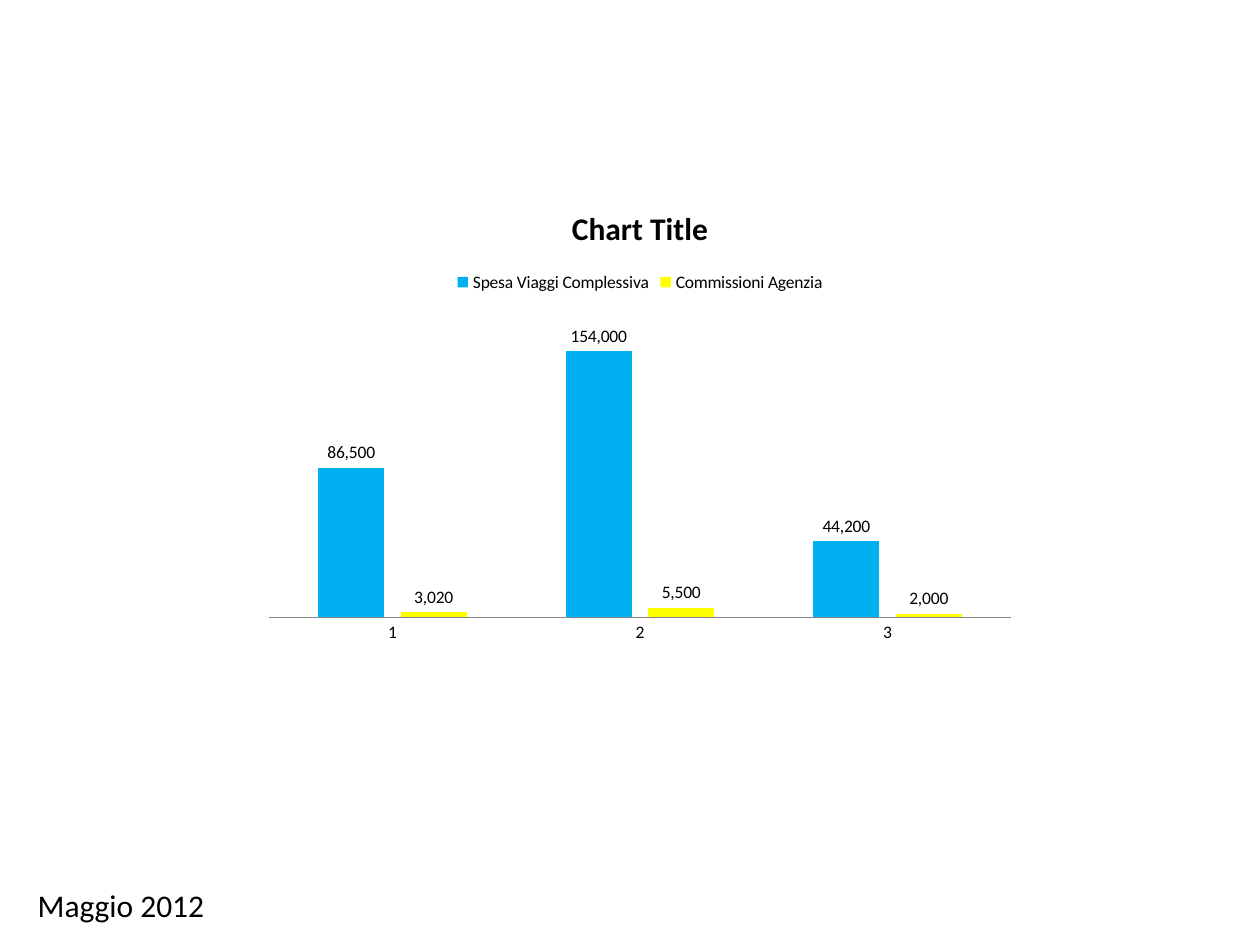
"""Build a slide with a clustered column chart of travel spend and agency fees."""
import pptx
import pptx.chart.data
import pptx.dml.color
import pptx.enum.chart
import pptx.enum.text
import pptx.util

Pt = pptx.util.Pt
FONT = "Calibri"
COLORS = {"text": "000000", "axis": "868686", "spend": "00B0F0", "fees": "FFFF00"}
NUMBER_FORMAT = "#,##0"


def rgb(name):
    return pptx.dml.color.RGBColor.from_string(COLORS[name])


def style_font(font, size, bold=False):
    font.name = FONT
    font.size = Pt(size)
    font.bold = bold
    font.color.rgb = rgb("text")


deck = pptx.Presentation()
deck.slide_width, deck.slide_height = Pt(720), Pt(540)
page = deck.slides.add_slide(deck.slide_layouts[6])

box = page.shapes.add_textbox(Pt(14.4), Pt(502.5), Pt(181.5), Pt(29))
box.text_frame.word_wrap = True
box.text_frame.auto_size = pptx.enum.text.MSO_AUTO_SIZE.SHAPE_TO_FIT_TEXT
span = box.text_frame.paragraphs[0].add_run()
span.text = "Maggio 2012"
style_font(span.font, 18)

data = pptx.chart.data.CategoryChartData(number_format=NUMBER_FORMAT)
data.categories = ["1", "2", "3"]
data.add_series("Spesa Viaggi Complessiva", [86500, 154000, 44200])
data.add_series("Commissioni Agenzia", [3020, 5500, 2000])
chart = page.shapes.add_chart(
    pptx.enum.chart.XL_CHART_TYPE.COLUMN_CLUSTERED,
    Pt(144.7), Pt(105.8), Pt(442), Pt(266.4), data,
).chart
style_font(chart.font, 10)

chart.has_title = True
span = chart.chart_title.text_frame.paragraphs[0].add_run()
span.text = "Chart Title"
style_font(span.font, 18, bold=True)
chart.chart_title.include_in_layout = False

chart.has_legend = True
chart.legend.position = pptx.enum.chart.XL_LEGEND_POSITION.TOP
chart.legend.include_in_layout = False

chart.category_axis.major_tick_mark = pptx.enum.chart.XL_TICK_MARK.NONE
chart.category_axis.format.line.color.rgb = rgb("axis")
chart.value_axis.visible = False
chart.value_axis.has_major_gridlines = False
chart.value_axis.minimum_scale = 0
chart.value_axis.maximum_scale = 180000

plot = chart.plots[0]
plot.gap_width = 150
plot.overlap = -25
plot.vary_by_categories = False
for series, color in zip(plot.series, ("spend", "fees")):
    series.format.fill.solid()
    series.format.fill.fore_color.rgb = rgb(color)
    labels = series.data_labels
    labels.show_value = True
    labels.number_format = NUMBER_FORMAT
    labels.number_format_is_linked = False
    labels.position = pptx.enum.chart.XL_LABEL_POSITION.OUTSIDE_END
    style_font(labels.font, 10)

deck.save("out.pptx")
